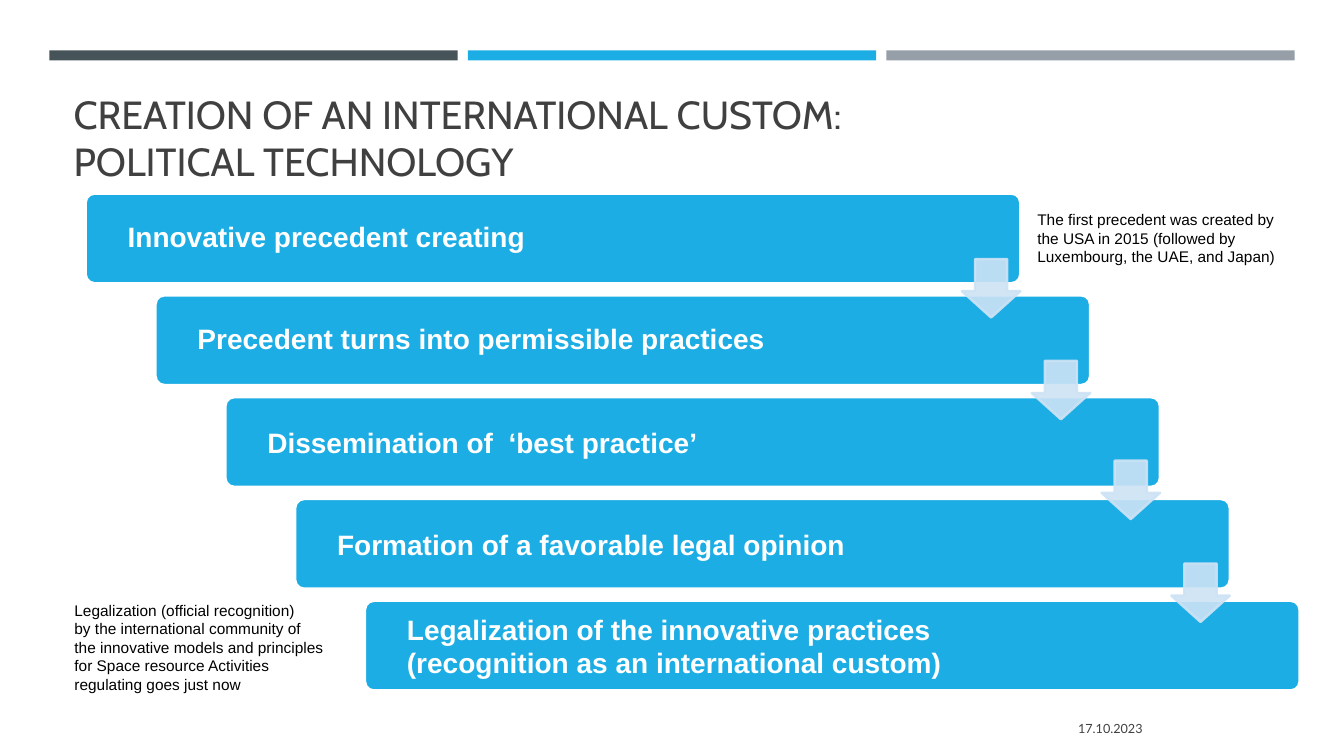
from lxml import etree
from pptx import Presentation
from pptx import util as u
from pptx.dml.color import RGBColor
from pptx.enum import shapes, text
from pptx.oxml.ns import qn

COLORS = {
    "slate": "465359", "blue": "1CADE4", "grey": "969FA7", "pale": "CDE3F5",
    "white": "FFFFFF", "black": "000000", "ink": "404040",
}
TITLE = "CREATION OF AN INTERNATIONAL CUSTOM:\vPOLITICAL TECHNOLOGY"
TITLE_BOX = (63, 80, 1206, 108)
BARS = ["slate", "blue", "grey"]
STEPS = [
    (["Innovative precedent creating"], 0.9),
    (["Precedent turns into permissible practices"], 0.9),
    (["Dissemination of  ‘best practice’"], 1.0),
    (["Formation of a favorable legal opinion"], 1.0),
    (["Legalization of the innovative practices",
      "(recognition as an international custom)"], 1.0),
]
ARROW_TOPS = [257, 358, 457, 559]
NOTES = [
    ((1019, 204, 257, 66),
     ["The first precedent was created by the USA in 2015 (followed by Luxembourg, the UAE, and Japan)"]),
    ((64, 591, 276, 103),
     ["Legalization (official recognition)",
      "by the international community of",
      "the innovative models and principles for Space resource Activities regulating goes just now"]),
]
DATE = "17.10.2023"
DATE_BOX = (832, 703, 311, 40)
STEP_X, STEP_Y, STEP_W, STEP_H = 85, 192, 927, 89
STEP_DX, STEP_DY = 69.25, 101
ARROW_SIZE = 58
BAR_X, BAR_Y, BAR_W, BAR_H, BAR_DX = 49, 50, 405, 10, 415


def px(n):
    return u.Inches(n / 100)


def color(name):
    return RGBColor.from_string(COLORS[name])


def add_shape(kind, box, fill, line=None):
    sp = s.shapes.add_shape(kind, *map(px, box))
    sp.shadow.inherit = False
    sp.fill.solid()
    sp.fill.fore_color.rgb = color(fill)
    if line:
        sp.line.color.rgb = color(line)
        sp.line.width = u.Pt(1.75)
    else:
        sp.line.fill.background()
    return sp


def write(sp, lines, font, size, ink, anchor, align=text.PP_ALIGN.LEFT, bold=False, spacing=1.0):
    tf = sp.text_frame
    tf.word_wrap = True
    tf.auto_size = text.MSO_AUTO_SIZE.NONE
    tf.vertical_anchor = anchor
    for i, line in enumerate(lines):
        p = tf.add_paragraph() if i else tf.paragraphs[0]
        p.text = line
        p.alignment = align
        p.line_spacing = spacing
        p.font.name = font
        p.font.size = u.Pt(size)
        p.font.bold = bold
        p.font.color.rgb = color(ink)


prs = Presentation()
prs.slide_width, prs.slide_height = u.Inches(13.33), u.Inches(7.5)
s = prs.slides.add_slide(prs.slide_layouts[5])
top, middle, bottom = text.MSO_ANCHOR.TOP, text.MSO_ANCHOR.MIDDLE, text.MSO_ANCHOR.BOTTOM

title = s.shapes.title
title.left, title.top, title.width, title.height = map(px, TITLE_BOX)
write(title, [TITLE], "Cabin", 28, "ink", bottom)

for i, fill in enumerate(BARS):
    add_shape(shapes.MSO_SHAPE.RECTANGLE, (BAR_X + i * BAR_DX, BAR_Y, BAR_W, BAR_H), fill)

for i, (lines, spacing) in enumerate(STEPS):
    box = (STEP_X + i * STEP_DX, STEP_Y + i * STEP_DY, STEP_W, STEP_H)
    sp = add_shape(shapes.MSO_SHAPE.ROUNDED_RECTANGLE, box, "blue", "white")
    sp.adjustments[0] = 0.1
    sp.text_frame.margin_left = px(39)
    write(sp, lines, "Arial", 20, "white", middle, bold=True, spacing=spacing)

for i, arrow_top in enumerate(ARROW_TOPS):
    x = STEP_X + STEP_W - ARROW_SIZE + i * STEP_DX
    sp = add_shape(shapes.MSO_SHAPE.DOWN_ARROW, (x, arrow_top, ARROW_SIZE, ARROW_SIZE), "pale", "pale")
    sp.adjustments[0], sp.adjustments[1] = 0.55, 0.45
    for clr in sp.element.spPr.iter(qn("a:srgbClr")):
        etree.SubElement(clr, qn("a:alpha")).set("val", "90000")

for box, lines in NOTES:
    write(s.shapes.add_textbox(*map(px, box)), lines, "Arial", 11, "black", top)

write(s.shapes.add_textbox(*map(px, DATE_BOX)), [DATE], "Lato", 9, "ink", middle, text.PP_ALIGN.RIGHT)

prs.save("out.pptx")
